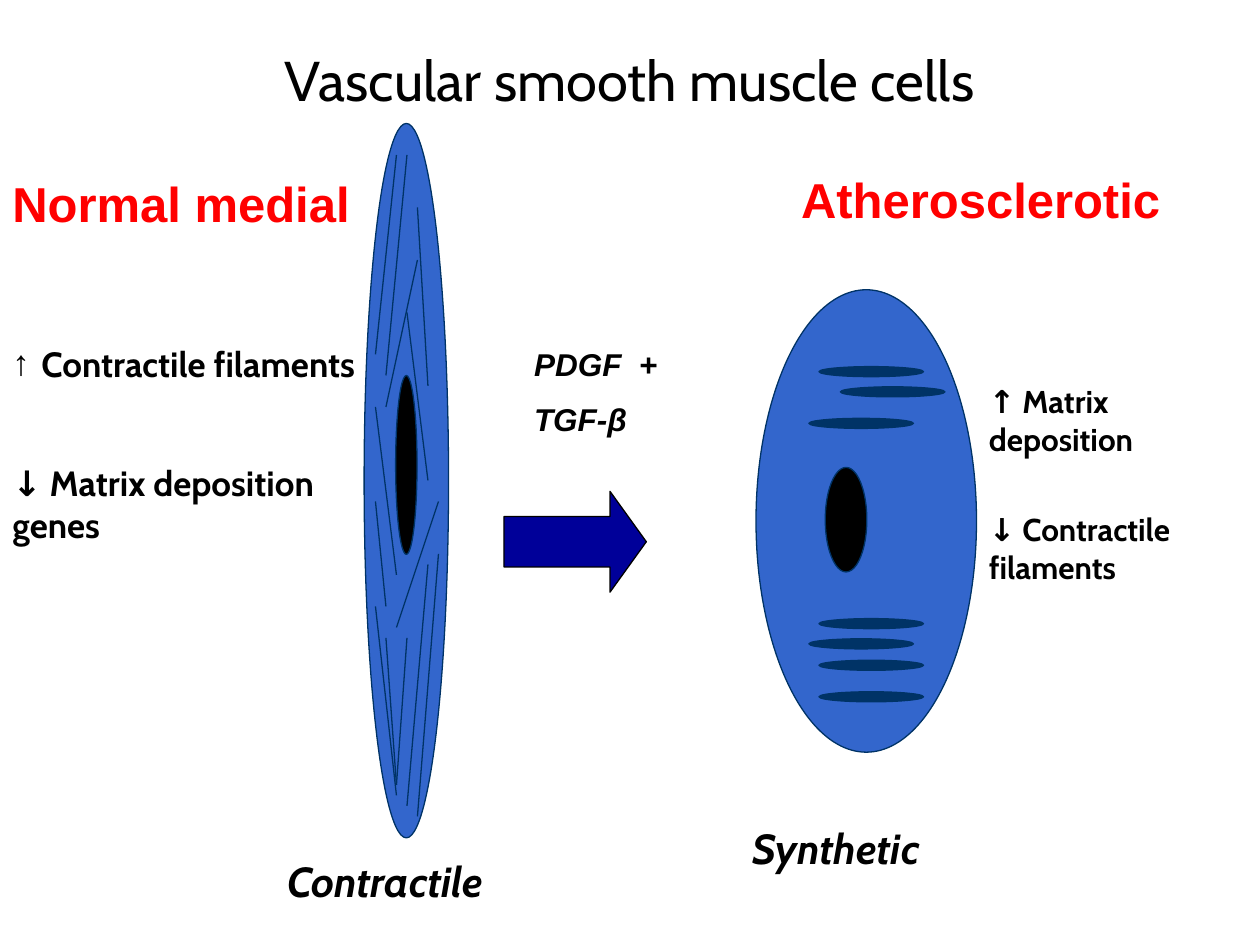
from lxml.etree import SubElement
from pptx import Presentation
from pptx.dml.color import RGBColor
from pptx.enum.shapes import MSO_CONNECTOR, MSO_SHAPE
from pptx.enum.text import MSO_ANCHOR, MSO_AUTO_SIZE, PP_ALIGN
from pptx.oxml.ns import qn
from pptx.util import Inches, Pt

COLORS = {
    "cell": "3366CC",
    "filament": "003366",
    "arrow": "000099",
    "black": "000000",
    "heading": "FF0000",
}

TITLE = {"name": "Cabin", "size": Pt(32)}
HEADING = {"name": "Arial", "size": Pt(28), "bold": True}
PHENOTYPE = {"name": "Cabin", "size": Pt(24), "bold": True, "italic": True}
NORMAL_GENES = {"name": "Cabin", "size": Pt(20), "bold": True}
PLAQUE_GENES = {"name": "Cabin", "size": Pt(18), "bold": True}
FACTOR = {"name": "Arial", "size": Pt(18), "bold": True, "italic": True}

# Filaments run between points of a grid: column, row, column, row
GRID_LEFT, GRID_TOP, GRID_STEP = 2.98, 1.23, 1 / 12
FILAMENTS = [
    (3, 0, 1, 21), (4, 5, 5, 22), (2, 0, 0, 19), (3, 15, 5, 31),
    (0, 24, 2, 40), (6, 33, 2, 45), (0, 33, 1, 43), (6, 38, 4, 63),
    (5, 39, 3, 62), (0, 43, 2, 61), (1, 46, 2, 60), (3, 46, 2, 60),
    (4, 10, 1, 24),
]
ORGANELLES = [
    (6.5, 2.91), (6.67, 3.07), (6.42, 3.32), (6.5, 4.91),
    (6.42, 5.07), (6.5, 5.24), (6.5, 5.49),
]


def color(key):
    return RGBColor.from_string(COLORS[key])


def add_text(page, place, lines, style, ink="black", gap=0):
    """Add a text box with one paragraph per line, gap points apart."""
    box = page.shapes.add_textbox(*map(Inches, place))
    frame = box.text_frame
    frame.word_wrap = True
    frame.auto_size = MSO_AUTO_SIZE.SHAPE_TO_FIT_TEXT
    for index, line in enumerate(lines):
        para = frame.add_paragraph() if index else frame.paragraphs[0]
        if index:
            para.space_before = Pt(gap)
        span = para.add_run()
        span.text = line
        span.font.color.rgb = color(ink)
        for attribute, value in style.items():
            setattr(span.font, attribute, value)
    return frame


def add_bullet(para, symbol, indent):
    properties = para._p.get_or_add_pPr()
    properties.set("marL", str(Inches(indent)))
    properties.set("indent", str(-Inches(indent)))
    SubElement(properties, qn("a:buFont"), typeface="Arial")
    SubElement(properties, qn("a:buChar"), char=symbol)


def add_solid(shapes, kind, place, fill, line="filament"):
    shape = shapes.add_shape(kind, *map(Inches, place))
    shape.shadow.inherit = False
    shape.fill.solid()
    shape.fill.fore_color.rgb = color(fill)
    shape.line.color.rgb = color(line)
    shape.line.width = Pt(0.75)
    return shape


def add_filament(shapes, ends):
    points = [
        Inches((GRID_TOP if index % 2 else GRID_LEFT) + step * GRID_STEP)
        for index, step in enumerate(ends)
    ]
    filament = shapes.add_connector(MSO_CONNECTOR.STRAIGHT, *points)
    filament.line.color.rgb = color("filament")
    filament.line.width = Pt(0.75)
    SubElement(filament._element.spPr, qn("a:effectLst"))


def add_contractile_cell(page):
    cell = page.shapes.add_group_shape().shapes
    add_solid(cell, MSO_SHAPE.OVAL, (2.89, 0.98, 0.67, 5.67), "cell")
    add_solid(cell, MSO_SHAPE.OVAL, (3.14, 2.98, 0.17, 1.42), "black")
    for ends in FILAMENTS:
        add_filament(cell, ends)


def add_synthetic_cell(page):
    add_solid(page.shapes, MSO_SHAPE.OVAL, (6, 2.3, 1.75, 3.67), "cell")
    add_solid(page.shapes, MSO_SHAPE.OVAL, (6.55, 3.71, 0.33, 0.83), "black")
    for left, top in ORGANELLES:
        add_solid(page.shapes, MSO_SHAPE.OVAL, (left, top, 0.83, 0.08), "filament")


def main():
    deck = Presentation()
    deck.slide_width, deck.slide_height = Inches(10), Inches(7.5)
    page = deck.slides.add_slide(deck.slide_layouts[6])

    # Title
    title = add_text(page, (0.5, 0, 9, 1.25), ["Vascular smooth muscle cells"], TITLE)
    title.auto_size = MSO_AUTO_SIZE.NONE
    title.vertical_anchor = MSO_ANCHOR.MIDDLE
    title.paragraphs[0].alignment = PP_ALIGN.CENTER

    # Cells and their phenotypes
    add_text(page, (2.18, 6.74, 2.08, 0.5), ["Contractile"], PHENOTYPE)
    add_contractile_cell(page)
    add_text(page, (5.87, 6.48, 2.08, 0.5), ["Synthetic"], PHENOTYPE)
    add_synthetic_cell(page)

    # Gene changes on either side
    normal = add_text(page, (0, 2.67, 3, 2.63),
                      ["Contractile filaments", "↓ Matrix deposition genes"],
                      NORMAL_GENES, gap=44)
    add_bullet(normal.paragraphs[0], "↑", 0.23)
    plaque = add_text(page, (7.75, 2.55, 2.25, 2.22),
                      ["↑ Matrix deposition", "↓ Contractile filaments"],
                      PLAQUE_GENES, gap=30)
    plaque.margin_top = Inches(0.48)

    # Growth factors driving the switch
    add_text(page, (4.14, 2.69, 1.31, 0.86), ["PDGF  +", "TGF-β"], FACTOR, gap=10)
    arrow = add_solid(page.shapes, MSO_SHAPE.RIGHT_ARROW, (4, 3.9, 1.13, 0.8),
                      "arrow", "black")
    arrow.adjustments[1] = 0.36

    # Headings
    add_text(page, (0, 1.33, 2.99, 0.57), ["Normal medial"], HEADING, "heading")
    add_text(page, (6.26, 1.3, 3.59, 0.57), ["Atherosclerotic"], HEADING, "heading")

    deck.save("out.pptx")


if __name__ == "__main__":
    main()
